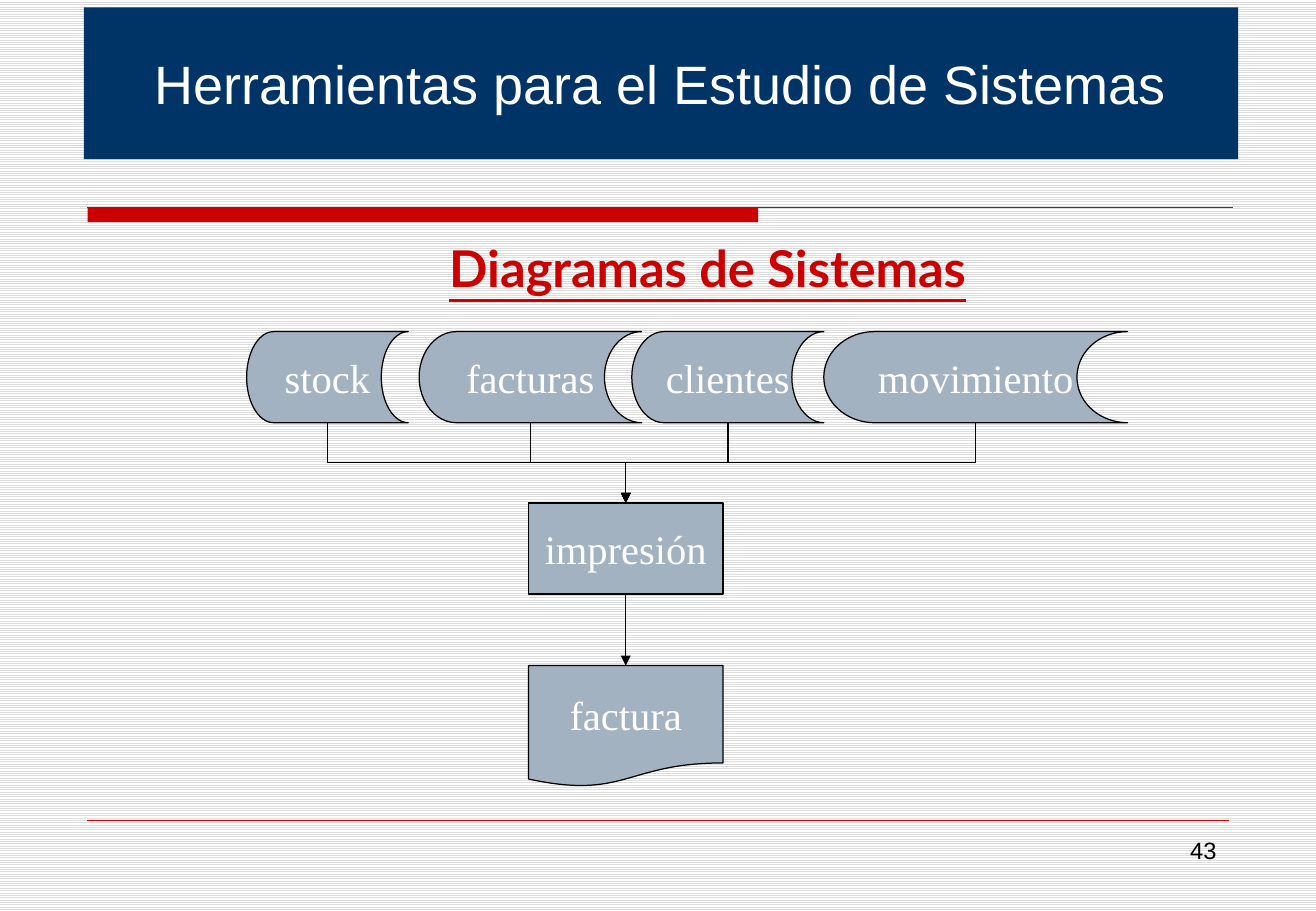
"""Build the slide on system diagrams: four files feed a print step that yields an invoice."""
import pptx
import pptx.dml.color
import pptx.enum.dml
import pptx.enum.shapes
import pptx.enum.text
import pptx.oxml.ns
import pptx.util
import lxml.etree

Inches = pptx.util.Inches
Pt = pptx.util.Pt
RGBColor = pptx.dml.color.RGBColor
SHAPE = pptx.enum.shapes.MSO_SHAPE
LINK = pptx.enum.shapes.MSO_CONNECTOR
ALIGN = pptx.enum.text.PP_ALIGN
MIDDLE = pptx.enum.text.MSO_ANCHOR.MIDDLE
qn = pptx.oxml.ns.qn

NAVY = RGBColor(0x00, 0x33, 0x66)
RED = RGBColor(0xCC, 0x00, 0x00)
STEEL = RGBColor(0xA3, 0xB2, 0xC1)
GREY = RGBColor(0xDD, 0xDD, 0xDD)
WHITE = RGBColor(0xFF, 0xFF, 0xFF)
BLACK = RGBColor(0x00, 0x00, 0x00)

MID = 5.15
FILE_TOP, FILE_BASE = 2.73, 3.48
STEP_TOP = 4.14
FILES = [("stock", 2.03, 1.33), ("facturas", 3.45, 1.83),
         ("clientes", 5.2, 1.58), ("movimiento", 6.78, 2.5)]


def write(frame, text, size, face, color, align=ALIGN.CENTER):
    """Write one run in the first paragraph and return its font."""
    para = frame.paragraphs[0]
    para.alignment = align
    run = para.add_run()
    run.text = text
    font = run.font
    font.size, font.name = Pt(size), face
    font.color.rgb = color
    return font


def add_label(slide, box, *style):
    """Add a wrapped text box and return its font."""
    frame = slide.shapes.add_textbox(*map(Inches, box)).text_frame
    frame.word_wrap = True
    return write(frame, *style)


def add_node(slide, kind, text, *box):
    """Add a labelled flowchart symbol."""
    node = slide.shapes.add_shape(kind, *map(Inches, box))
    node.shadow.inherit = False
    node.fill.solid()
    node.fill.fore_color.rgb = STEEL
    node.line.color.rgb = BLACK
    node.line.width = Pt(0.75)
    frame = node.text_frame
    frame.word_wrap = False
    frame.vertical_anchor = MIDDLE
    write(frame, text, 24, "Times New Roman", WHITE)
    return node


def add_line(slide, ends, color=BLACK, width=0.75, kind=LINK.STRAIGHT, arrow=False):
    """Add a connector, with an arrowhead if asked."""
    line = slide.shapes.add_connector(kind, *map(Inches, ends))
    line.line.color.rgb = color
    line.line.width = Pt(width)
    if arrow:
        tail = lxml.etree.SubElement(line.line._get_or_add_ln(), qn("a:tailEnd"))
        tail.set("type", "triangle")
    lxml.etree.SubElement(line._element.spPr, qn("a:effectLst"))
    return line


def add_elbow(slide, start):
    """Lead a file down, across and down to the print step."""
    side = 1 if start > MID else -1
    half_x = abs(start - MID) / 2
    half_y = (STEP_TOP - FILE_BASE) / 2
    mid_x, mid_y = (start + MID) / 2, (FILE_BASE + STEP_TOP) / 2
    ends = (mid_x - side * half_y, mid_y - half_x,
            mid_x + side * half_y, mid_y + half_x)
    elbow = add_line(slide, ends, kind=LINK.ELBOW, arrow=True)
    turn = 90 if side > 0 else 270
    elbow._element.spPr.find(qn("a:xfrm")).set("rot", str(turn * 60000))


def add_title(slide, text):
    """Place the title on its navy band."""
    title = slide.shapes.title
    title.left, title.top, title.width, title.height = map(Inches, (0.69, 0.06, 9.5, 1.25))
    title.fill.solid()
    title.fill.fore_color.rgb = NAVY
    title.text_frame.vertical_anchor = MIDDLE
    write(title.text_frame, text, 32, "Arial", WHITE)


def add_frame(slide):
    """Set the striped background and the red rules."""
    fill = slide.background.fill
    fill.patterned()
    fill.pattern = pptx.enum.dml.MSO_PATTERN.LIGHT_HORIZONTAL
    fill.fore_color.rgb, fill.back_color.rgb = GREY, WHITE
    bar = slide.shapes.add_shape(SHAPE.RECTANGLE, *map(Inches, (0.72, 1.71, 5.52, 0.12)))
    bar.shadow.inherit = False
    bar.fill.solid()
    bar.fill.fore_color.rgb = RED
    bar.line.fill.background()
    add_line(slide, (0.72, 1.71, 10.15, 1.71), RED)
    add_line(slide, (0.72, 6.75, 10.11, 6.75), RED, 0.25)


def add_flow(slide):
    """Draw the files, the print step and the invoice."""
    for name, left, width in FILES:
        add_node(slide, SHAPE.FLOWCHART_STORED_DATA, name,
                 left, FILE_TOP, width, FILE_BASE - FILE_TOP)
        add_elbow(slide, left + width / 2)
    step = add_node(slide, SHAPE.FLOWCHART_PROCESS, "impresión", 4.35, STEP_TOP, 1.6, 0.75)
    paper = add_node(slide, SHAPE.FLOWCHART_DOCUMENT, "factura", 4.35, 5.48, 1.6, 1)
    arrow = add_line(slide, (MID, 4.89, MID, 5.48), arrow=True)
    arrow.begin_connect(step, 2)
    arrow.end_connect(paper, 0)


def main():
    """Build and save the slide."""
    deck = pptx.Presentation()
    deck.slide_width, deck.slide_height = Inches(10.83), Inches(7.5)
    slide = deck.slides.add_slide(deck.slide_layouts[5])
    add_frame(slide)
    add_title(slide, "Herramientas para el Estudio de Sistemas")
    font = add_label(slide, (1.24, 1.9, 9.17, 0.67),
                     "Diagramas de Sistemas", 30, "Lato", RED)
    font.bold = font.underline = True
    add_label(slide, (7.76, 6.83, 2.35, 0.52), "43", 14, "Arial", BLACK, ALIGN.RIGHT)
    add_flow(slide)
    deck.save("out.pptx")


if __name__ == "__main__":
    main()
